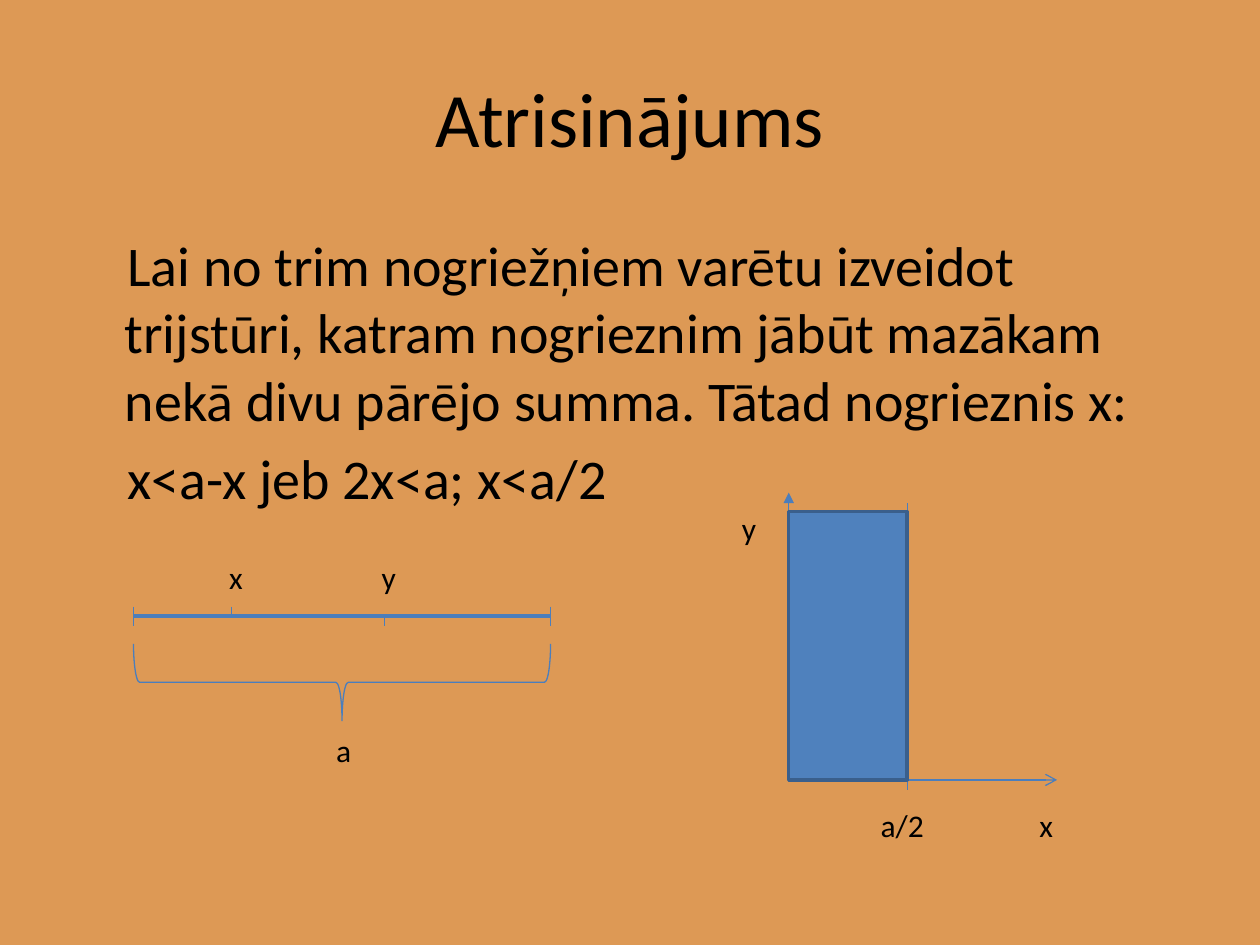
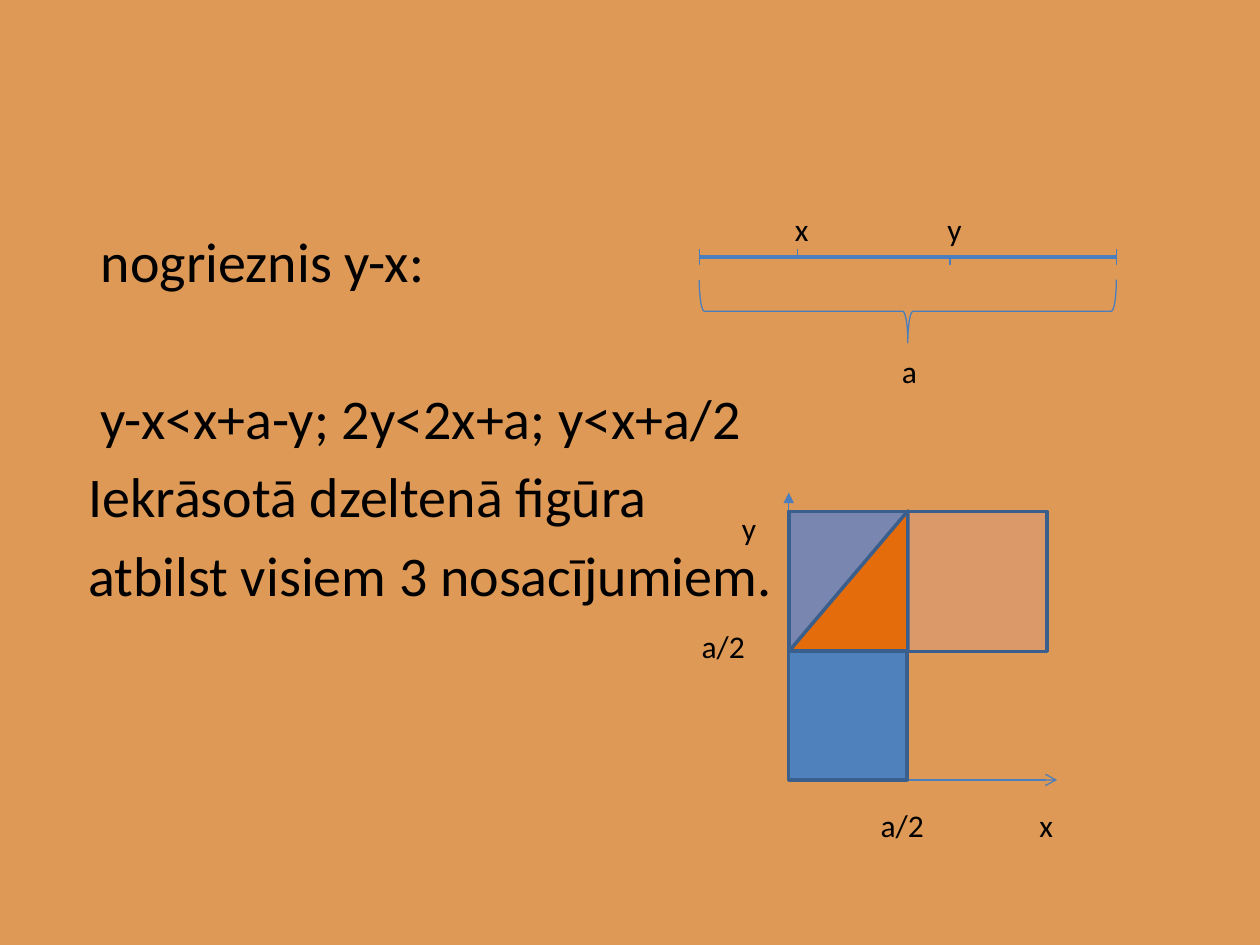
from lxml import etree
from pptx import Presentation
from pptx.dml.color import RGBColor
from pptx.enum.shapes import MSO_CONNECTOR, MSO_SHAPE
from pptx.oxml.ns import qn
from pptx.util import Inches, Pt

STRAIGHT = MSO_CONNECTOR.STRAIGHT
RECT, TRIANGLE, BRACE = MSO_SHAPE.RECTANGLE, MSO_SHAPE.RIGHT_TRIANGLE, MSO_SHAPE.LEFT_BRACE

BACKGROUND = RGBColor(0xDD, 0x99, 0x55)
BLACK = RGBColor(0x00, 0x00, 0x00)
LINE = RGBColor(0x4B, 0x7E, 0xBC)
BORDER = RGBColor(0x3A, 0x5F, 0x8C)
BLUE = RGBColor(0x4F, 0x81, 0xBD)
PINK = RGBColor(0xD9, 0x96, 0x94)
ORANGE = RGBColor(0xE4, 0x6C, 0x0A)
FONT = "Calibri"
TITLE = {"name": FONT, "size": Pt(44)}
BODY = {"name": FONT, "size": Pt(32)}
LABEL = {"name": FONT, "size": Pt(18)}

prs = Presentation()
prs.slide_width, prs.slide_height = Inches(10), Inches(7.5)
U = prs.slide_width // 100  # all lengths are in hundredths of the slide width

# Graph grid: y axis, a/2 and square edge across; top, a/2 and x axis down
X0, X1, X2 = 62.6, 72, 83.1
Y0, Y1, Y2 = 40.6, 51.7, 61.9

# Segment: length, marks x and y along it
LENGTH, MARK_X, MARK_Y = 33.1, 7.8, 19.9


def add_text(tf, text, fmt, first=True):
    p = tf.paragraphs[0] if first else tf.add_paragraph()
    r = p.add_run()
    r.text = text
    r.font.color.rgb = BLACK
    for name, value in fmt.items():
        setattr(r.font, name, value)
    return p


def add_line(s, x1, y1, x2, y2, width=0.75, head=None):
    c = s.shapes.add_connector(STRAIGHT, *(int(v * U) for v in (x1, y1, x2, y2)))
    c.line.color.rgb = LINE
    c.line.width = Pt(width)
    if head:
        etree.SubElement(c.line._get_or_add_ln(), qn("a:tailEnd"), type=head)
    etree.SubElement(c._element.spPr, qn("a:effectLst"))


# Paragraphs: text, left margin, first-line indent, space before
# Segment: left, top, vertical scale
# Figures: kind, box, rotation, fill, opacity
slides = [
    {"title": "Atrisinājums",
     "body_at": (5.1, 17.8),
     "body": [("Lai no trim nogriežņiem varētu izveidot trijstūri, katram nogrieznim "
               "jābūt mazākam nekā divu pārējo summa. Tātad nogrieznis x:", 3.8, 0.2, None),
              ("x<a-x jeb 2x<a; x<a/2", 4, 0, None)],
     "segment": (10.6, 48.9, 1),
     "guides": [(X1, Y2 + 0.8, X1, Y0 - 0.7)],
     "figures": [],
     "labels": []},
    {"title": None,
     "body_at": (5, 17.5),
     "body": [("nogrieznis y-x:", 2, 0, None),
              ("y-x<x+a-y; 2y<2x+a; y<x+a/2", 2, 0, Pt(51)),
              ("Iekrāsotā dzeltenā figūra", 1, 0, None),
              ("atbilst visiem 3 nosacījumiem.", 1, 0, None)],
     "segment": (55.5, 20.4, 0.82),
     "guides": [(X1, Y0, X0, Y1)],
     "figures": [(RECT, (X0, Y0, X2 - X0, Y1 - Y0), 0, PINK, 31),
                 (TRIANGLE, (61.8, 41.4, Y1 - Y0, X1 - X0), 270, ORANGE, 100)],
     "labels": [("a/2", 54.7, 49.3, 6.3)]},
]

for data in slides:
    s = prs.slides.add_slide(prs.slide_layouts[1])
    s.background.fill.solid()
    s.background.fill.fore_color.rgb = BACKGROUND

    # Title and body
    title, body = s.placeholders
    if data["title"]:
        add_text(title.text_frame, data["title"], TITLE)
    else:
        title._element.getparent().remove(title._element)
    left, top = data["body_at"]
    body.left, body.top, body.width, body.height = (int(v * U) for v in (left, top, 90, 49.5))
    for i, (text, margin, indent, before) in enumerate(data["body"]):
        p = add_text(body.text_frame, text, BODY, i == 0)
        if before:
            p.space_before = before
        pPr = p._p.get_or_add_pPr()
        pPr.set("marL", str(int(margin * U)))
        pPr.set("indent", str(int(indent * U)))
        etree.SubElement(pPr, qn("a:buNone"))

    # Segment a with its end ticks and marks
    left, y, k = data["segment"]
    tick = 0.75 * k
    add_line(s, left, y, left + LENGTH, y, 2)
    for x, up, down in ((MARK_X, tick, 0), (MARK_Y, 0, tick), (0, tick, tick), (LENGTH, tick, tick)):
        add_line(s, left + x, y - up, left + x, y + down)

    # Brace under the segment, turned about its centre
    depth = 6.1 * k
    box = (left + (LENGTH - depth) / 2, y + 5.25 * k - LENGTH / 2, depth, LENGTH)
    brace = s.shapes.add_shape(BRACE, *(int(v * U) for v in box))
    brace.rotation = 270
    brace.adjustments[0], brace.adjustments[1] = 0.08, 0.5
    brace.fill.background()
    brace.line.color.rgb = LINE
    brace.line.width = Pt(0.75)
    brace.shadow.inherit = False

    # Graph: guide lines, axes and regions
    for ends in data["guides"]:
        add_line(s, *ends)
    add_line(s, X0, Y2, X0, 39.1, head="triangle")
    add_line(s, X0, Y2, 83.9, Y2, head="arrow")
    region = (RECT, (X0, Y0, X1 - X0, Y2 - Y0), 0, BLUE, 100)
    for kind, box, rotation, color, opacity in [region] + data["figures"]:
        sp = s.shapes.add_shape(kind, *(int(v * U) for v in box))
        sp.rotation = rotation
        sp.fill.solid()
        sp.fill.fore_color.rgb = color
        if opacity < 100:
            clr = sp._element.spPr.find(".//" + qn("a:srgbClr"))
            etree.SubElement(clr, qn("a:alpha"), val=str(opacity * 1000))
        sp.line.color.rgb = BORDER
        sp.line.width = Pt(2)
        sp.shadow.inherit = False

    # Labels of the segment and the graph
    labels = [("a", left + 15.1, y + 8.6 * k, 3),
              ("x", left + 6.6, y - 5.1 * k, 3),
              ("y", left + 18.7, y - 5.1 * k, 2.4),
              ("x", 81.5, 63.5, 3.1),
              ("a/2", 68.9, 63.5, 6.3),
              ("y", 57.9, 39.9, 3.1)]
    for text, x, top, width in labels + data["labels"]:
        tb = s.shapes.add_textbox(*(int(v * U) for v in (x, top, width, 4)))
        tb.text_frame.word_wrap = True
        add_text(tb.text_frame, text, LABEL)

prs.save("out.pptx")
